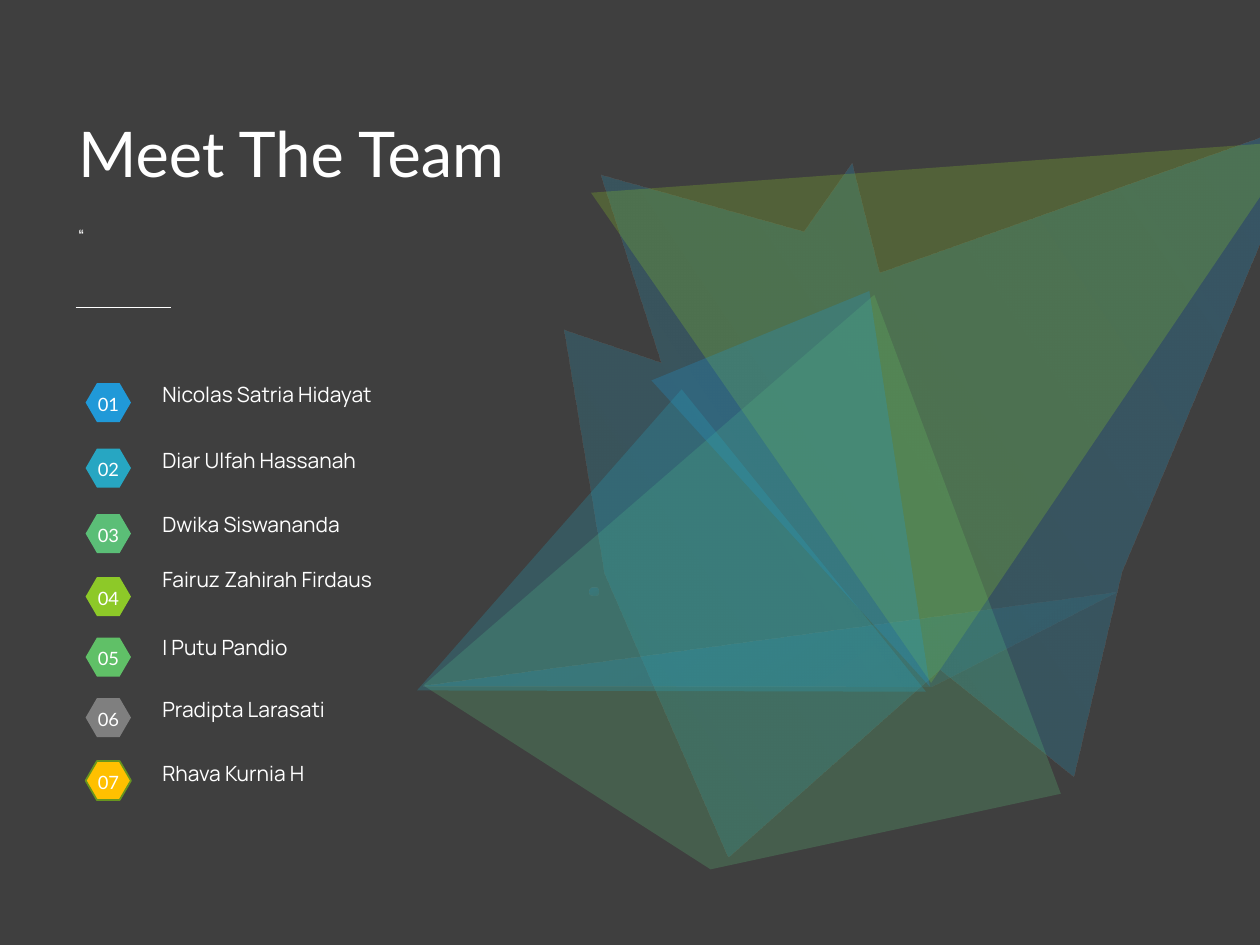
from dataclasses import dataclass

from lxml.etree import SubElement
from pptx import Presentation
from pptx.dml.color import RGBColor
from pptx.enum.shapes import MSO_CONNECTOR as Connector, MSO_SHAPE as Shape
from pptx.enum.text import MSO_ANCHOR as Anchor, MSO_AUTO_SIZE as AutoSize, PP_ALIGN as Align
from pptx.oxml.ns import qn
from pptx.util import Inches, Pt


@dataclass(frozen=True)
class Theme:
    background: str = "3F3F3F"
    text: str = "FFFFFF"
    blue: str = "2099D8"
    teal: str = "27A6C2"
    green: str = "5BBE77"
    leaf: str = "60C067"
    lime: str = "8DC928"
    gray: str = "7F7F7F"
    amber: str = "FFC000"
    outline: str = "68951E"
    heading_font: str = "Lato"
    body_font: str = "Manrope"
    title_size: float = 36
    name_size: float = 12
    small_size: float = 10.5


THEME = Theme()

# Square grid: 10 columns by 7.5 rows
COLUMNS, ROWS = 10, 7.5
CELL = Inches(1)

# Badge top, name top, name, badge colour, badge outline
TEAM = [
    (3.04, 2.98, "Nicolas Satria Hidayat", THEME.blue, None),
    (3.56, 3.50, "Diar Ulfah Hassanah", THEME.teal, None),
    (4.08, 4.01, "Dwika Siswananda", THEME.green, None),
    (4.58, 4.45, "Fairuz Zahirah Firdaus", THEME.lime, None),
    (5.06, 4.99, "I Putu Pandio", THEME.leaf, None),
    (5.54, 5.48, "Pradipta Larasati", THEME.gray, None),
    (6.04, 5.99, "Rhava Kurnia H", THEME.amber, THEME.outline),
]

# Corners, colour stops as (colour, opacity in percent), gradient angle
FADE = [(THEME.blue, 20), (THEME.teal, 10)]
FADE_ANGLE = 304
FACETS = [
    ([(8.52, 6.16), (7.46, 5.31), (5.78, 6.8), (4.8, 4.55), (4.48, 2.62), (5.25, 2.88),
      (4.77, 1.39), (6.38, 1.84), (6.76, 1.3), (6.98, 2.17), (10.41, 0.95), (8.9, 4.54)],
     [(THEME.blue, 25), (THEME.teal, 20)], 214),
    ([(3.36, 5.44), (6.94, 2.34), (8.42, 6.3), (5.64, 6.9)], [(THEME.green, 25)], None),
    ([(4.69, 1.53), (7.39, 5.42), (10.3, 1.12)], [(THEME.lime, 25)], None),
    ([(6.9, 2.31), (7.38, 5.45), (5.17, 3.02)], [(THEME.blue, 25)], None),
    ([(3.31, 5.48), (7.35, 5.49), (5.41, 3.09)], [(THEME.teal, 25)], None),
    ([(3.36, 5.44), (8.85, 4.7), (7.38, 5.45)], FADE, FADE_ANGLE),
]


def grid(*cells):
    return [round(cell * CELL) for cell in cells]


def rgb(color):
    return RGBColor.from_string(color)


def write(shape, text, font, size, align=Align.LEFT):
    frame = shape.text_frame
    frame.word_wrap = True
    paragraph = frame.paragraphs[0]
    paragraph.alignment = align
    run = paragraph.add_run()
    run.text = text
    run.font.name = font
    run.font.size = Pt(size)
    run.font.color.rgb = rgb(THEME.text)
    return paragraph


def add_text(slide, box, text, font, size, align=Align.LEFT):
    return write(slide.shapes.add_textbox(*grid(*box)), text, font, size, align)


def add_title(slide, box, text):
    title = slide.shapes.title
    title.left, title.top, title.width, title.height = grid(*box)
    title.text_frame.auto_size = AutoSize.NONE
    title.text_frame.vertical_anchor = Anchor.MIDDLE
    paragraph = write(title, text, THEME.heading_font, THEME.title_size)
    paragraph.line_spacing = 0.9


def add_rule(slide, left, right, row):
    rule = slide.shapes.add_connector(Connector.STRAIGHT, *grid(left, row, right, row))
    rule.line.color.rgb = rgb(THEME.text)
    rule.line.width = Pt(1)
    SubElement(rule._element.spPr, qn("a:effectLst"))


def add_badge(slide, top, number, color, outline):
    badge = slide.shapes.add_shape(Shape.HEXAGON, *grid(0.68, top, 0.36, 0.31))
    badge.adjustments[0] = 0.29
    badge.shadow.inherit = False
    badge.fill.solid()
    badge.fill.fore_color.rgb = rgb(color)
    if outline:
        badge.line.color.rgb = rgb(outline)
        badge.line.width = Pt(1)
    else:
        badge.line.fill.background()
    add_text(slide, (0.6, top + 0.03, 0.52, 0.28), f"{number:02}",
             THEME.heading_font, THEME.small_size, Align.CENTER)


def tint(shape, stops, angle):
    """Fill with one translucent colour, or with a gradient between two."""
    shape.shadow.inherit = False
    shape.line.fill.background()
    fill = shape.fill
    if angle is None:
        fill.solid()
        fill.fore_color.rgb = rgb(stops[0][0])
    else:
        fill.gradient()
        fill.gradient_angle = angle
        for stop, (color, _) in zip(fill.gradient_stops, stops):
            stop.color.rgb = rgb(color)
    colors = shape._element.spPr.iter(qn("a:srgbClr"))
    for element, (_, opacity) in zip(colors, stops):
        SubElement(element, qn("a:alpha"), val=str(opacity * 1000))


def add_facet(slide, corners, stops, angle):
    start, *others = [grid(*corner) for corner in corners]
    builder = slide.shapes.build_freeform(*start)
    builder.add_line_segments(others, close=True)
    tint(builder.convert_to_shape(), stops, angle)


def main():
    presentation = Presentation()
    presentation.slide_width, presentation.slide_height = grid(COLUMNS, ROWS)
    slide = presentation.slides.add_slide(presentation.slide_layouts[5])
    slide.background.fill.solid()
    slide.background.fill.fore_color.rgb = rgb(THEME.background)

    # Heading
    add_rule(slide, 0.6, 1.36, 2.44)
    add_title(slide, (0.52, 0.75, 5.18, 1), "Meet The Team")
    quote = add_text(slide, (0.52, 1.65, 4.12, 0.78), "“", THEME.body_font, THEME.small_size)
    quote.line_spacing = 1.5
    quote.space_before = Pt(10)

    # Team list
    for number, (top, name_top, name, color, outline) in enumerate(TEAM, 1):
        add_badge(slide, top, number, color, outline)
        add_text(slide, (1.19, name_top, 3.1, 0.3), name, THEME.body_font, THEME.name_size)

    # Translucent facets and the small dot
    for corners, stops, angle in FACETS:
        add_facet(slide, corners, stops, angle)
    dot = slide.shapes.add_shape(Shape.OVAL, *grid(4.68, 4.66, 0.07, 0.07))
    tint(dot, FADE, FADE_ANGLE)

    presentation.save("out.pptx")


if __name__ == "__main__":
    main()
